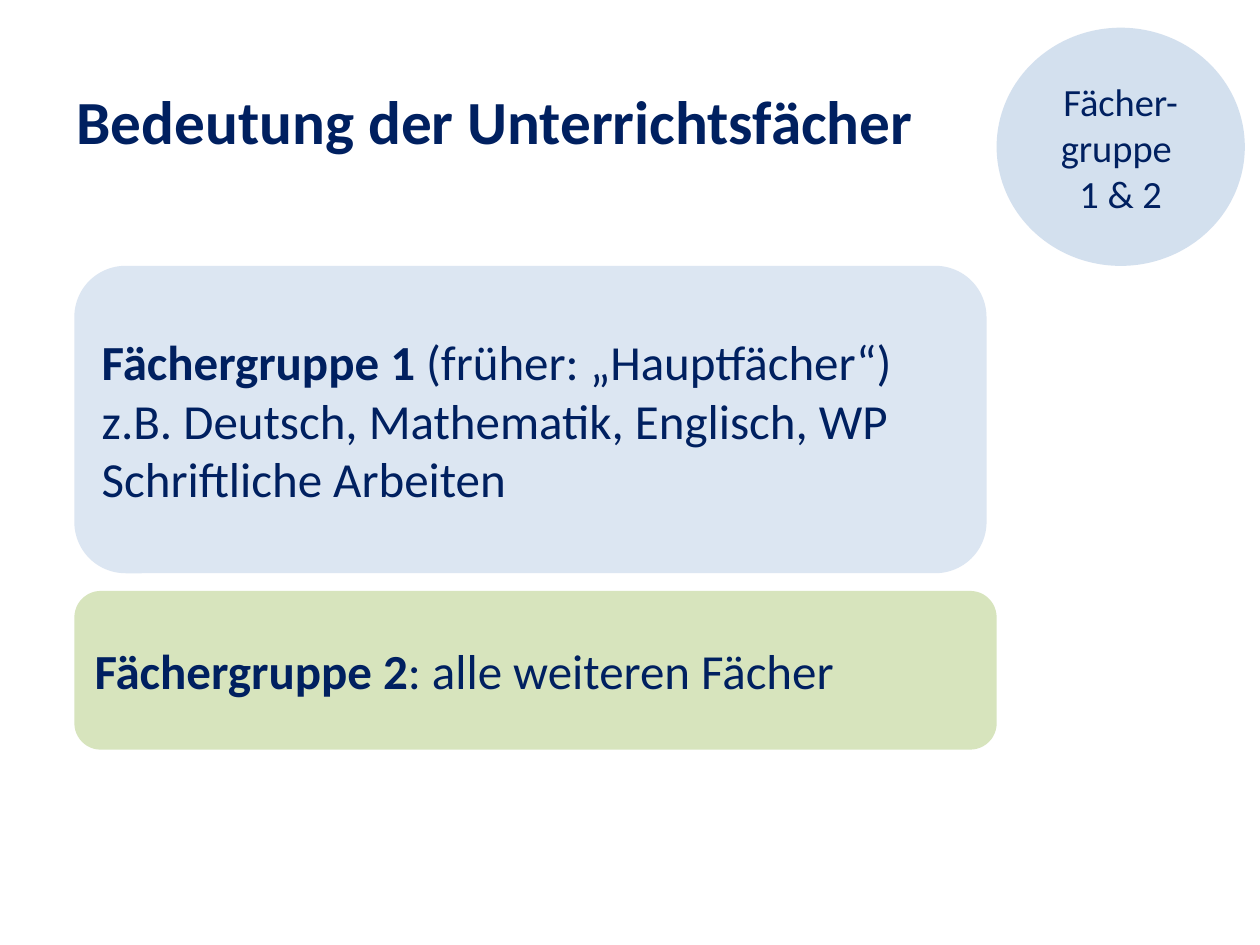
import pptx
import pptx.util
import pptx.dml.color
import pptx.enum.shapes
import pptx.enum.text
import pptx.oxml
import pptx.oxml.ns
from pptx.util import Inches

NAVY = "002060"
SHAPES = pptx.enum.shapes.MSO_SHAPE
ALIGN = pptx.enum.text.PP_ALIGN


def color(value):
    return pptx.dml.color.RGBColor.from_string(value)


def write_lines(shape, lines, size, align=ALIGN.LEFT):
    frame = shape.text_frame
    frame.word_wrap = True
    for index, spans in enumerate(lines):
        para = frame.paragraphs[0] if index == 0 else frame.add_paragraph()
        para.alignment = align
        for text, bold in spans:
            span = para.add_run()
            span.text = text
            span.font.name = "Calibri"
            span.font.size = pptx.util.Pt(size)
            span.font.bold = bold
            span.font.color.rgb = color(NAVY)


def add_panel(page, kind, box, fill, opacity=100):
    panel = page.shapes.add_shape(kind, *map(Inches, box))
    panel.shadow.inherit = False
    panel.fill.solid()
    panel.fill.fore_color.rgb = color(fill)
    panel.line.fill.background()
    panel.text_frame.vertical_anchor = pptx.enum.text.MSO_ANCHOR.MIDDLE
    if opacity < 100:
        tint = panel.fill._xPr.find(".//" + pptx.oxml.ns.qn("a:srgbClr"))
        alpha = pptx.oxml.parse_xml(
            f'<a:alpha {pptx.oxml.ns.nsdecls("a")} val="{opacity * 1000}"/>')
        tint.append(alpha)
    return panel


def add_title(page, box, text):
    title = page.shapes.add_textbox(*map(Inches, box))
    write_lines(title, [[(text, True)]], 35)


def add_subject_group(page, box, fill, lines):
    panel = add_panel(page, SHAPES.ROUNDED_RECTANGLE, box, fill)
    write_lines(panel, lines, 28)


def add_badge(page, box, lines):
    badge = add_panel(page, SHAPES.FLOWCHART_CONNECTOR, box, "B9CDE5", 62)
    write_lines(badge, [[(line, False)] for line in lines], 22, ALIGN.CENTER)


def main():
    deck = pptx.Presentation()
    deck.slide_width, deck.slide_height = Inches(10), Inches(7.5)
    page = deck.slides.add_slide(deck.slide_layouts[6])
    add_subject_group(page, (0.59, 2.11, 7.24, 2.44), "DCE6F2", [
        [("Fächergruppe 1", True), (" (früher: „Hauptfächer“)", False)],
        [("z.B. Deutsch, Mathematik, Englisch, WP", False)],
        [("Schriftliche Arbeiten", False)],
    ])
    add_badge(page, (7.91, 0.22, 1.97, 1.89), ["Fächer-gruppe ", "1 & 2"])
    add_title(page, (0.51, 0.61, 9.06, 1.11), "Bedeutung der Unterrichtsfächer")
    add_subject_group(page, (0.59, 4.69, 7.32, 1.26), "D7E4BD", [
        [("Fächergruppe 2", True), (": alle weiteren Fächer", False)],
    ])
    deck.save("out.pptx")


if __name__ == "__main__":
    main()
